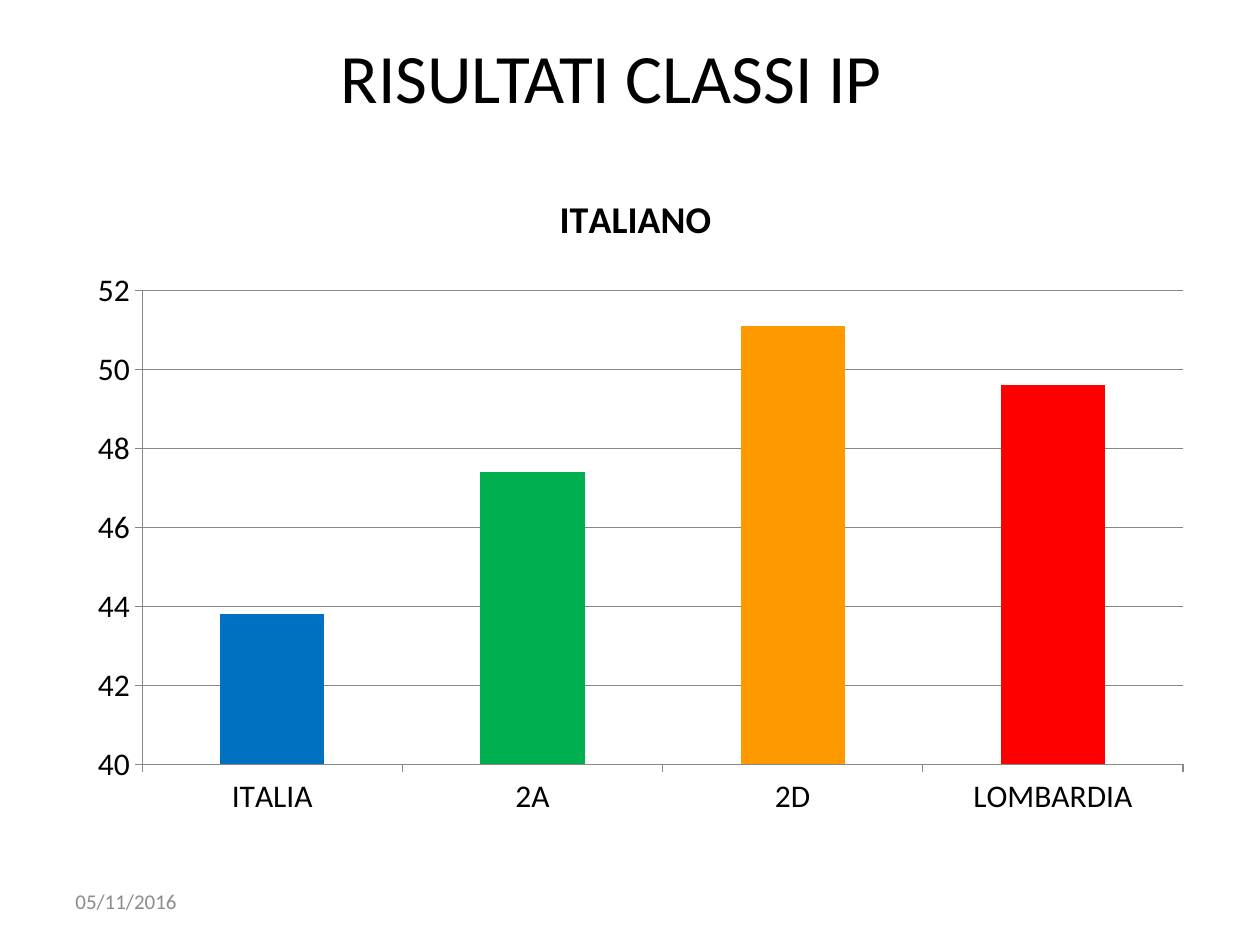
from dataclasses import dataclass

from lxml.etree import SubElement
from pptx import Presentation
from pptx.chart.chart import Chart
from pptx.chart.data import CategoryChartData
from pptx.dml.color import RGBColor
from pptx.enum.chart import XL_CHART_TYPE as ChartType, XL_TICK_MARK as Tick
from pptx.enum.text import MSO_ANCHOR as Anchor, PP_ALIGN as Align
from pptx.oxml.ns import qn
from pptx.slide import Slide
from pptx.util import Pt

FONT = "Calibri"
BLACK = "000000"
AXIS_GRAY = "878787"
DATE_GRAY = "8C8C8C"


@dataclass(frozen=True)
class Box:
    left: float
    top: float
    width: float
    height: float

    def lengths(self) -> tuple:
        return Pt(self.left), Pt(self.top), Pt(self.width), Pt(self.height)


@dataclass(frozen=True)
class Result:
    group: str
    score: float
    color: str


RESULTS = [
    Result("ITALIA", 43.8, "0070C0"),
    Result("2A", 47.4, "00B050"),
    Result("2D", 51.1, "FF9900"),
    Result("LOMBARDIA", 49.6, "FF0000"),
]


def rgb(value: str) -> RGBColor:
    return RGBColor.from_string(value)


def style_font(font, size: float, color: str = BLACK, bold: bool = False) -> None:
    font.name = FONT
    font.size = Pt(size)
    font.bold = bold
    font.color.rgb = rgb(color)


def add_text(slide: Slide, text: str, box: Box, *, size: float,
             color: str = BLACK, align: Align = Align.LEFT) -> None:
    frame = slide.shapes.add_textbox(*box.lengths()).text_frame
    frame.word_wrap = True
    frame.vertical_anchor = Anchor.MIDDLE
    paragraph = frame.paragraphs[0]
    paragraph.alignment = align
    run = paragraph.add_run()
    run.text = text
    style_font(run.font, size, color)


def style_line(line) -> None:
    line.color.rgb = rgb(AXIS_GRAY)
    line.width = Pt(0.75)


def place_plot(chart: Chart, x: float, y: float, w: float, h: float) -> None:
    plot_area = chart._chartSpace.chart.plotArea
    layout = plot_area.find(qn("c:layout"))
    if layout is None:
        layout = SubElement(plot_area, qn("c:layout"))
        plot_area.insert(0, layout)
    manual = SubElement(layout, qn("c:manualLayout"))
    settings = {"layoutTarget": "inner", "xMode": "edge", "yMode": "edge",
                "x": x, "y": y, "w": w, "h": h}
    for tag, value in settings.items():
        SubElement(manual, qn(f"c:{tag}")).set("val", str(value))


def add_results_chart(slide: Slide, subject: str, results: list[Result], box: Box) -> None:
    scores = CategoryChartData()
    scores.categories = [result.group for result in results]
    scores.add_series("Series 1", [result.score for result in results])
    chart = slide.shapes.add_chart(
        ChartType.COLUMN_CLUSTERED, *box.lengths(), scores).chart
    style_font(chart.font, 18)
    chart.has_legend = False

    chart.has_title = True
    heading = chart.chart_title.text_frame
    heading.text = subject
    style_font(heading.paragraphs[0].runs[0].font, 21.6, bold=True)
    chart.chart_title.include_in_layout = False

    for axis in (chart.category_axis, chart.value_axis):
        axis.major_tick_mark = Tick.OUTSIDE
        axis.minor_tick_mark = Tick.NONE
        style_line(axis.format.line)
    score_axis = chart.value_axis
    score_axis.minimum_scale, score_axis.maximum_scale = 40, 52
    score_axis.major_unit = 2
    score_axis.has_major_gridlines = True
    style_line(score_axis.major_gridlines.format.line)
    score_axis.tick_labels.number_format = "0"
    score_axis.tick_labels.number_format_is_linked = False

    columns = chart.plots[0]
    columns.gap_width = 150
    columns.vary_by_categories = False
    scores_series = columns.series[0]
    for index, result in enumerate(results):
        fill = scores_series.points[index].format.fill
        fill.solid()
        fill.fore_color.rgb = rgb(result.color)
    place_plot(chart, 0.06, 0.19, 0.92, 0.72)


def main() -> None:
    deck = Presentation()
    deck.slide_width, deck.slide_height = Pt(720), Pt(540)
    slide = deck.slides.add_slide(deck.slide_layouts[6])
    add_text(slide, "RISULTATI CLASSI IP ", Box(48, 15, 612, 57),
             size=39.6, align=Align.CENTER)
    add_results_chart(slide, "ITALIANO ", RESULTS, Box(42.5, 94.3, 646.5, 376.5))
    add_text(slide, "05/11/2016", Box(36, 500.5, 168, 28.75),
             size=12, color=DATE_GRAY)
    deck.save("out.pptx")


if __name__ == "__main__":
    main()
